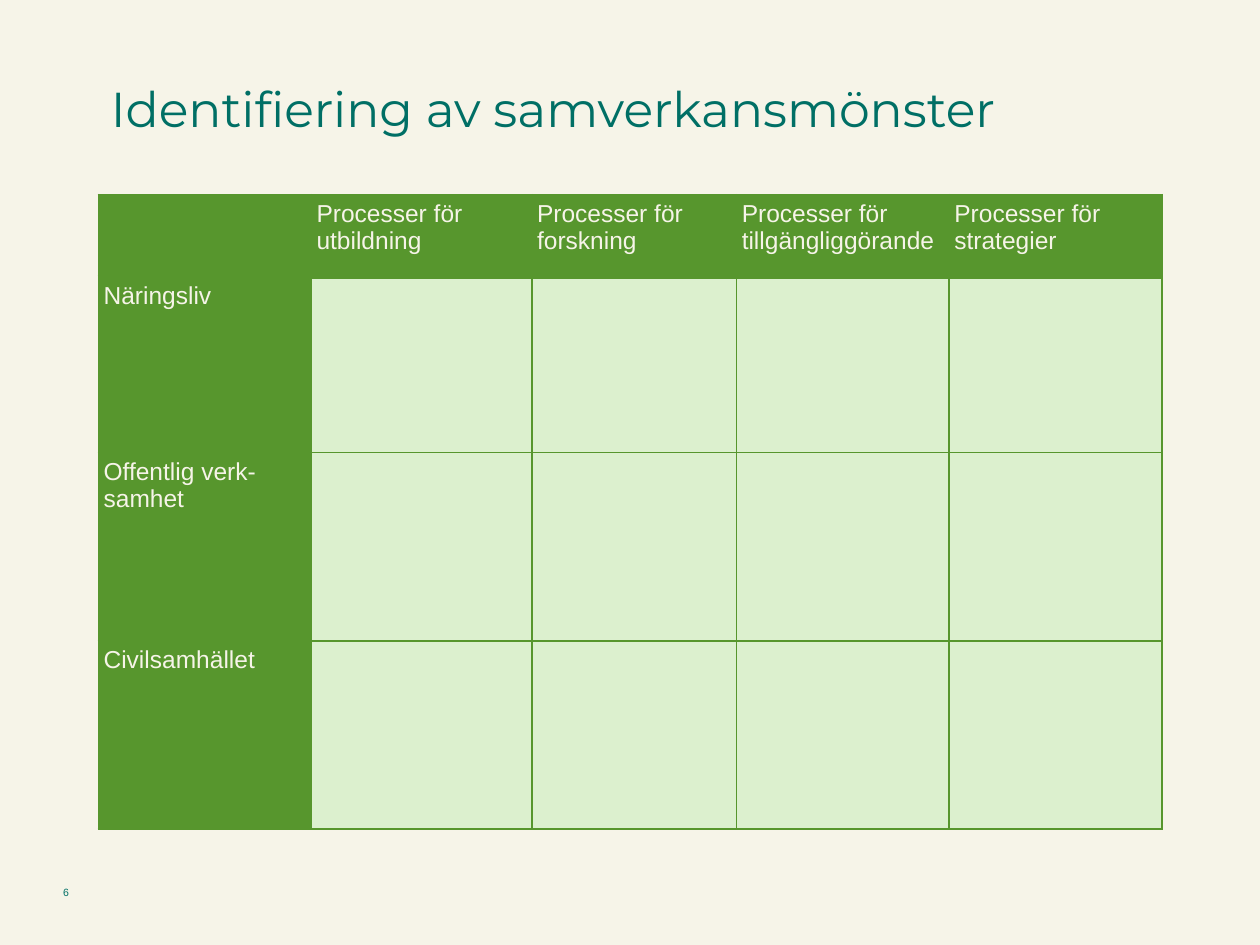
"""Build a slide with an empty matrix for identifying collaboration patterns."""
from dataclasses import dataclass

from lxml import etree
from pptx import Presentation
from pptx.dml.color import RGBColor
from pptx.enum.text import MSO_ANCHOR, MSO_AUTO_SIZE, PP_ALIGN
from pptx.oxml.ns import qn
from pptx.util import Pt

LEFT = PP_ALIGN.LEFT
BOTTOM, MIDDLE = MSO_ANCHOR.BOTTOM, MSO_ANCHOR.MIDDLE
NO_FIT = MSO_AUTO_SIZE.NONE


@dataclass(frozen=True)
class Theme:
    paper: str = "F6F4E8"
    teal: str = "006F65"
    green: str = "57962D"
    pale: str = "DCF0CE"
    heading_font: str = "Montserrat"
    body_font: str = "Arial"
    title_size: float = 28
    table_size: float = 14
    number_size: float = 6


class SlideBuilder:
    def __init__(self, prs, theme):
        self.theme = theme
        self.slide = prs.slides.add_slide(prs.slide_layouts[5])
        fill = self.slide.background.fill
        fill.solid()
        fill.fore_color.rgb = RGBColor.from_string(theme.paper)

    def style(self, p, font, size, color):
        p.alignment = LEFT
        p.font.name = font
        p.font.size = Pt(size)
        p.font.color.rgb = RGBColor.from_string(color)

    def title(self, text, left, top, width, height):
        sp = self.slide.shapes.title
        sp.left, sp.top, sp.width, sp.height = map(Pt, (left, top, width, height))
        tf = sp.text_frame
        tf.text = text
        tf.auto_size = NO_FIT
        tf.vertical_anchor = BOTTOM
        p = tf.paragraphs[0]
        p.line_spacing = 0.9
        self.style(p, self.theme.heading_font, self.theme.title_size, self.theme.teal)

    def page_number(self, text, left, top, width, height):
        sp = self.slide.shapes.add_textbox(*map(Pt, (left, top, width, height)))
        tf = sp.text_frame
        tf.text = text
        tf.word_wrap = True
        tf.vertical_anchor = MIDDLE
        tf.margin_left = tf.margin_top = tf.margin_right = tf.margin_bottom = 0
        self.style(tf.paragraphs[0], self.theme.body_font, self.theme.number_size, self.theme.teal)

    def border(self, cell, side, width):
        tc_pr = cell._tc.get_or_add_tcPr()
        ln = etree.SubElement(tc_pr, qn(f"a:ln{side}"), w=str(Pt(width)))
        fill = etree.SubElement(ln, qn("a:solidFill"))
        etree.SubElement(fill, qn("a:srgbClr"), val=self.theme.green)

    def cell(self, cell, text, is_header, top_width, bottom_width):
        for side, width in zip("LRTB", (1, 1, top_width, bottom_width)):
            self.border(cell, side, width)
        cell.fill.solid()
        color = self.theme.green if is_header else self.theme.pale
        cell.fill.fore_color.rgb = RGBColor.from_string(color)
        cell.margin_left = cell.margin_right = Pt(3)
        cell.margin_top = cell.margin_bottom = Pt(3)
        cell.text = text
        p = cell.text_frame.paragraphs[0]
        self.style(p, self.theme.body_font, self.theme.table_size, self.theme.paper)

    def matrix(self, col_heads, row_heads, left, top, col_widths, row_heights):
        n_rows, n_cols = len(row_heights), len(col_widths)
        size = (left, top, sum(col_widths), sum(row_heights))
        table = self.slide.shapes.add_table(n_rows, n_cols, *map(Pt, size)).table
        for col, width in zip(table.columns, col_widths):
            col.width = Pt(width)
        for row, height in zip(table.rows, row_heights):
            row.height = Pt(height)
        for i in range(n_rows):
            for j in range(n_cols):
                text = ""
                if i == 0 and j > 0:
                    text = col_heads[j - 1]
                elif j == 0 and i > 0:
                    text = row_heads[i - 1]
                self.cell(table.cell(i, j), text, i == 0 or j == 0,
                          3 if i == 1 else 1, 3 if i == 0 else 1)


def main():
    prs = Presentation()
    prs.slide_width, prs.slide_height = Pt(720), Pt(540)
    s = SlideBuilder(prs, Theme())
    s.page_number("6", 36, 506.8, 168, 6.5)
    s.title("Identifiering av samverkansmönster", 56.2, 20.2, 607.6, 62.6)
    s.matrix(
        [f"Processer för {name}" for name in
         ("utbildning", "forskning", "tillgängliggörande", "strategier")],
        ["Näringsliv", "Offentlig verk-samhet", "Civilsamhället"],
        56.2, 111.2,
        [121.7, 126, 117, 121.5, 121.5],
        [47, 100.5, 107.5, 107.5],
    )
    prs.save("out.pptx")


if __name__ == "__main__":
    main()
